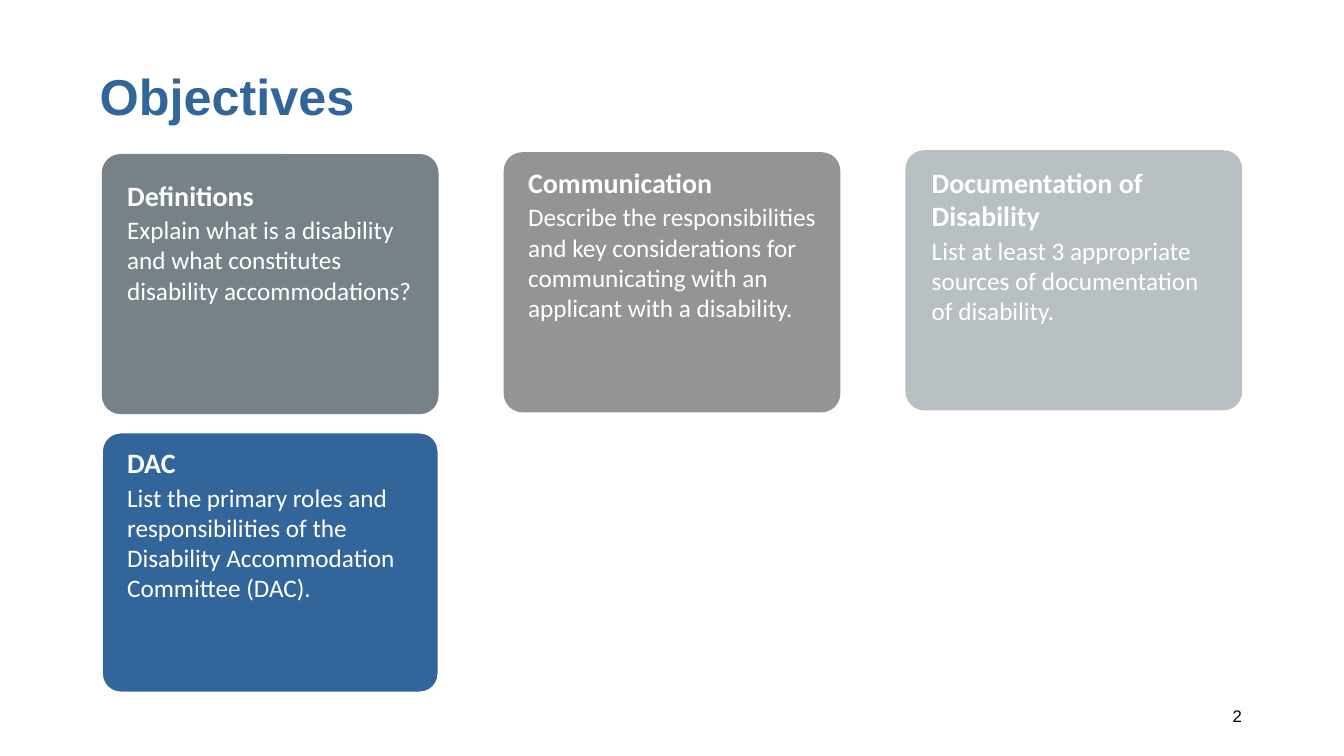
from pptx import Presentation
from pptx import util as u
from pptx.dml.color import RGBColor
from pptx.enum import shapes, text

Pt = u.Pt
COLORS = {
    "blue": "32669A",
    "slate": "768288",
    "gray": "949494",
    "silver": "B9C0C3",
    "white": "FFFFFF",
    "black": "000000",
}
CARD_WIDTH, CARD_HEIGHT = 240.5, 185.8
COLUMN_STEP = 287
FIRST_LEFT = 72.8
ROUNDING = 0.072
# A rounded rectangle moves its text in by this much at each corner
CORNER_INSET = ROUNDING * CARD_HEIGHT * 0.29

# column, top, fill, text distance from left, top and right edge, heading, body
CARDS = [
    (2, 107.3, "silver", (18.7, 10.8, 21.7), "Documentation of Disability",
     "List at least 3 appropriate sources of documentation of disability."),
    (0, 308.9, "blue", (18, 9.4, 16.4), "DAC",
     "List the primary roles and responsibilities of the Disability "
     "Accommodation Committee (DAC)."),
    (1, 108.7, "gray", (17.4, 9.4, 16.4), "Communication",
     "Describe the responsibilities and key considerations for "
     "communicating with an applicant with a disability."),
    (0, 110, "slate", (18, 17.3, 16.4), "Definitions",
     "Explain what is a disability and what constitutes disability accommodations?"),
]


def color(name):
    return RGBColor.from_string(COLORS[name])


def write(para, words, size, font, ink, bold=False, align=text.PP_ALIGN.LEFT):
    para.alignment = align
    span = para.add_run()
    span.text = words
    span.font.size = Pt(size)
    span.font.name = font
    span.font.bold = bold
    span.font.color.rgb = color(ink)


def add_title(page, left, top, width, height):
    title = page.shapes.title
    title.left, title.top = Pt(left), Pt(top)
    title.width, title.height = Pt(width), Pt(height)
    title.text_frame.vertical_anchor = text.MSO_ANCHOR.MIDDLE
    write(title.text_frame.paragraphs[0], "Objectives", 36, "Arial", "blue",
          bold=True)


def add_card(page, left, top, fill, insets, heading, body):
    # Rounded panel
    card = page.shapes.add_shape(
        shapes.MSO_SHAPE.ROUNDED_RECTANGLE,
        Pt(left), Pt(top), Pt(CARD_WIDTH), Pt(CARD_HEIGHT))
    card.adjustments[0] = ROUNDING
    card.shadow.inherit = False
    card.fill.solid()
    card.fill.fore_color.rgb = color(fill)
    if fill == "blue":
        card.line.color.rgb = color("white")
        card.line.width = Pt(1.5)
    else:
        card.line.fill.background()

    # Heading and body inside the panel
    frame = card.text_frame
    frame.word_wrap = True
    frame.vertical_anchor = text.MSO_ANCHOR.TOP
    frame.margin_left, frame.margin_top, frame.margin_right = (
        Pt(inset - CORNER_INSET) for inset in insets)
    write(frame.paragraphs[0], heading, 20, "Calibri", "white", bold=True)
    para = frame.add_paragraph()
    para.space_before = Pt(1.8)
    write(para, body, 18, "Calibri", "white")


def add_page_number(page, left, top, width, height):
    box = page.shapes.add_textbox(Pt(left), Pt(top), Pt(width), Pt(height))
    box.text_frame.word_wrap = True
    write(box.text_frame.paragraphs[0], "2", 12, "Arial", "black",
          align=text.PP_ALIGN.RIGHT)


def main():
    deck = Presentation()
    deck.slide_width, deck.slide_height = Pt(960), Pt(540)
    page = deck.slides.add_slide(deck.slide_layouts[5])
    add_title(page, 64, 42.5, 712.8, 51)
    for column, *details in CARDS:
        add_card(page, FIRST_LEFT + column * COLUMN_STEP, *details)
    add_page_number(page, 678.2, 500.4, 216, 28.8)
    deck.save("out.pptx")


if __name__ == "__main__":
    main()
